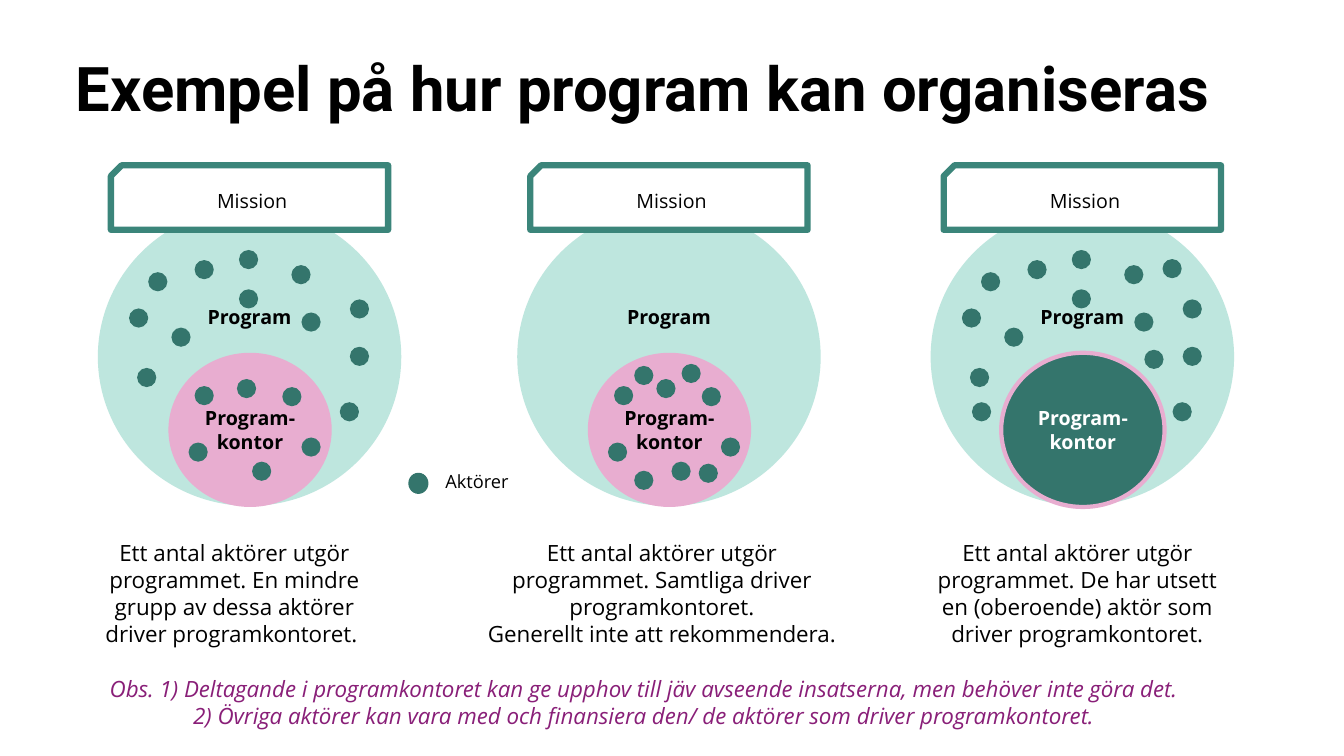
import pptx
import pptx.dml.color
import pptx.enum.shapes
import pptx.enum.text
import pptx.util

Inches = pptx.util.Inches
Pt = pptx.util.Pt
ShapeType = pptx.enum.shapes.MSO_SHAPE
Align = pptx.enum.text.PP_ALIGN
Anchor = pptx.enum.text.MSO_ANCHOR
AutoSize = pptx.enum.text.MSO_AUTO_SIZE

BLACK, WHITE, GREEN, PINK = "000000", "FFFFFF", "34756C", "E8ADD0"
MINT, FRAME, PURPLE = "BEE6DE", "3B857A", "891F78"

OUTER_ACTORS = [
    (0.5, 2.7), (0.96, 2.58), (1.4, 2.48), (0.39, 3.65), (1.4, 2.87), (1.92, 2.63),
    (2.02, 3.1), (2.5, 2.97), (2.5, 3.44), (2.4, 3.99), (0.73, 3.25), (0.31, 3.06),
]
OFFICE_ACTORS = [
    (1.53, 4.58), (1.83, 3.84), (0.96, 3.83), (1.38, 3.76), (2.02, 4.34), (0.9, 4.39),
]
EXTRA_OFFICE_ACTORS = [(1.16, 4.67), (1.63, 3.61), (1.16, 3.63), (1.8, 4.6)]
EXTRA_OUTER_ACTORS = [(2.3, 2.57), (0.41, 3.99), (2.12, 3.47)]

MODELS = [
    {"left": 0.97, "actors": OUTER_ACTORS + OFFICE_ACTORS,
     "office": {"fill": PINK}, "office_text": BLACK,
     "caption_box": (0.81, 5.3, 3.03, 1.18),
     "caption": "Ett antal aktörer utgör programmet. En mindre grupp av dessa "
                "aktörer driver programkontoret. "},
    {"left": 5.13, "actors": OFFICE_ACTORS + EXTRA_OFFICE_ACTORS,
     "office": {"fill": PINK}, "office_text": BLACK,
     "caption_box": (4.72, 5.3, 3.69, 1.18),
     "caption": "Ett antal aktörer utgör programmet. Samtliga driver "
                "programkontoret.\nGenerellt inte att rekommendera."},
    {"left": 9.23, "actors": OUTER_ACTORS + EXTRA_OUTER_ACTORS,
     "office": {"fill": GREEN, "line": PINK, "line_width": 3}, "office_text": WHITE,
     "caption_box": (9.17, 5.3, 3.03, 1.18),
     "caption": "Ett antal aktörer utgör programmet. De har utsett en (oberoende) "
                "aktör som driver programkontoret."},
]


def color(value):
    """Return the colour for a hex string."""
    return pptx.dml.color.RGBColor.from_string(value)


def set_attributes(target, values):
    """Set every named format value on the target."""
    for name, value in values.items():
        setattr(target, name, value)


class SlideBuilder:
    """Hold the text style and the slide being built."""

    def __init__(self, slide):
        """Remember the slide and the default font."""
        self.slide = slide
        self.font = "Open Sans"

    def label(self, shape, text, size, ink=BLACK, align=Align.CENTER,
              frame_format=None, **font_format):
        """Put one formatted paragraph into a shape."""
        frame = shape.text_frame
        set_attributes(frame, {"word_wrap": True, **(frame_format or {})})
        paragraph = frame.paragraphs[0]
        paragraph.alignment = align
        for index, line in enumerate(text.split("\n")):
            if index:
                paragraph.add_line_break()
            run = paragraph.add_run()
            run.text = line
            set_attributes(run.font, {"name": self.font, "size": Pt(size), **font_format})
            run.font.color.rgb = color(ink)
        return paragraph

    def title(self, text, box):
        """Place and format the title placeholder."""
        shape = self.slide.shapes.title
        names = ("left", "top", "width", "height")
        set_attributes(shape, dict(zip(names, map(Inches, box))))
        paragraph = self.label(
            shape, text, 44, align=Align.LEFT, name="Roboto", bold=True,
            frame_format={"vertical_anchor": Anchor.BOTTOM, "auto_size": AutoSize.NONE})
        paragraph.line_spacing = 0.9

    def shape(self, kind, box, fill, line=None, line_width=1):
        """Add a filled preset shape with an optional outline."""
        shape = self.slide.shapes.add_shape(kind, *map(Inches, box))
        shape.shadow.inherit = False
        shape.fill.solid()
        shape.fill.fore_color.rgb = color(fill)
        if line:
            shape.line.color.rgb = color(line)
            shape.line.width = Pt(line_width)
        else:
            shape.line.fill.background()
        return shape

    def text(self, text, box, size, ink=BLACK, align=Align.CENTER, wrap=True, **font_format):
        """Add a text box."""
        shape = self.slide.shapes.add_textbox(*map(Inches, box))
        self.label(shape, text, size, ink, align, {"word_wrap": wrap}, **font_format)

    def model(self, left, actors, office, office_text, caption_box, caption):
        """Draw one way to organise a programme, with its caption."""
        middle = {"vertical_anchor": Anchor.MIDDLE}
        program = self.shape(ShapeType.OVAL, (left, 2.06, 3.01, 2.96), MINT)
        self.label(program, "Program", 14, bold=True,
                   frame_format={**middle, "margin_bottom": Inches(0.84)})
        center = self.shape(ShapeType.OVAL, (left + 0.7, 3.5, 1.62, 1.53), **office)
        self.label(center, "Program-kontor", 14, office_text, bold=True, frame_format=middle)
        mission = self.shape(ShapeType.SNIP_1_RECTANGLE, (left + 0.13, 1.64, 2.75, 0.64),
                             WHITE, FRAME, 4.5)
        mission.element.spPr.get_or_add_xfrm().set("flipH", "1")
        self.label(mission, "Mission", 14, frame_format=middle)
        for offset, top in actors:
            self.shape(ShapeType.OVAL, (left + offset, top, 0.19, 0.19), GREEN)
        self.text(caption, caption_box, 16)


def main():
    """Build and save the slide."""
    presentation = pptx.Presentation()
    presentation.slide_width = Inches(13.33)
    presentation.slide_height = Inches(7.5)
    builder = SlideBuilder(presentation.slides.add_slide(presentation.slide_layouts[5]))
    builder.title("Exempel på hur program kan organiseras", (0.65, 0.35, 12, 0.94))
    builder.shape(ShapeType.OVAL, (4.05, 4.69, 0.2, 0.21), GREEN)
    builder.text("Aktörer", (4.32, 4.62, 0.83, 0.32), 13, align=Align.LEFT, wrap=False)
    for model in MODELS:
        builder.model(**model)
    builder.text(
        "Obs. 1) Deltagande i programkontoret kan ge upphov till jäv avseende insatserna, "
        "men behöver inte göra det. 2) Övriga aktörer kan vara med och finansiera den/ de "
        "aktörer som driver programkontoret.",
        (0.87, 6.65, 11.03, 0.64), 16, PURPLE, italic=True)
    presentation.save("out.pptx")


if __name__ == "__main__":
    main()
